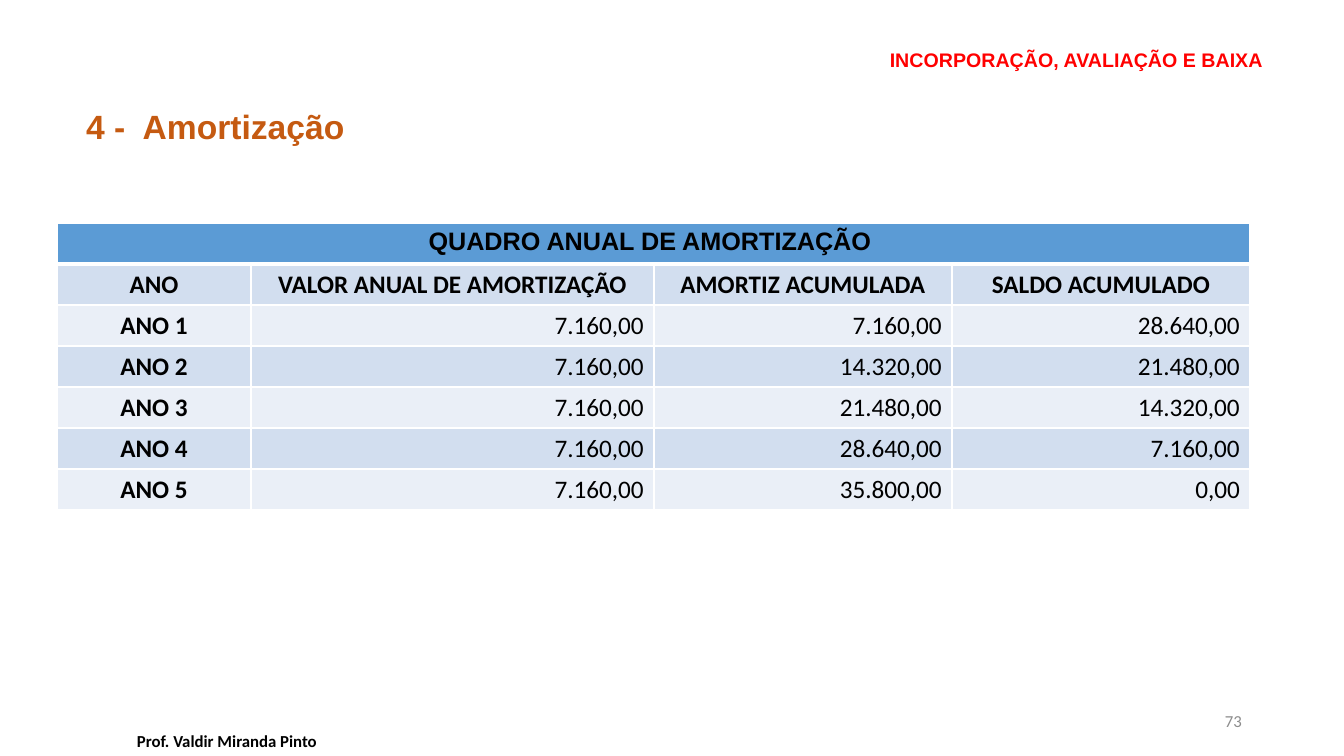
from dataclasses import dataclass

import pptx
import pptx.dml.color
import pptx.enum.text
import pptx.oxml
import pptx.oxml.ns
import pptx.util
from lxml import etree

PX = 914400 / 100.8
ALIGN = pptx.enum.text.PP_ALIGN
ANCHOR = pptx.enum.text.MSO_ANCHOR


@dataclass
class Style:
    size: int
    font: str
    color: str
    bold: bool
    align: ALIGN


@dataclass
class Label:
    text: str
    box: tuple[int, int, int, int]
    style: Style
    anchor: ANCHOR = ANCHOR.MIDDLE
    spacing: float = 1.0


TITLE = Label("INCORPORAÇÃO, AVALIAÇÃO E BAIXA", (98, 42, 1175, 38),
              Style(14, "Arial", "FF0000", True, ALIGN.RIGHT), spacing=0.9)
TOPIC = Label("4 -  Amortização", (76, 105, 1175, 49),
              Style(24, "Arial", "C55A11", True, ALIGN.LEFT), ANCHOR.TOP, 0.9)
FOOTERS = [
    Label("Prof. Valdir Miranda Pinto", (0, 728, 454, 26),
          Style(12, "Calibri", "000000", True, ALIGN.CENTER)),
    Label("73", (950, 701, 302, 40),
          Style(12, "Calibri", "8C8C8C", False, ALIGN.RIGHT)),
]

CAPTION = Style(18, "Arial", "000000", True, ALIGN.CENTER)
HEADING = Style(18, "Calibri", "000000", True, ALIGN.CENTER)
AMOUNT = Style(18, "Calibri", "000000", False, ALIGN.RIGHT)
CAPTION_FILL = "5B9BD5"
BANDS = ("EAEFF7", "D2DEEF")
TABLE_LEFT, TABLE_TOP, ROW_HEIGHT = 57, 223, 41
COL_WIDTHS = (194, 403, 298, 298)
ROWS = [
    ("QUADRO ANUAL DE AMORTIZAÇÃO ", "", "", ""),
    ("ANO", "VALOR ANUAL DE AMORTIZAÇÃO", "AMORTIZ ACUMULADA", "SALDO ACUMULADO"),
    ("ANO 1", "7.160,00", "7.160,00", "28.640,00"),
    ("ANO 2", "7.160,00", "14.320,00", "21.480,00"),
    ("ANO 3", "7.160,00", "21.480,00", "14.320,00"),
    ("ANO 4", "7.160,00", "28.640,00", "7.160,00"),
    ("ANO 5", "7.160,00", "35.800,00", "0,00"),
]


def px(n: int) -> int:
    return pptx.util.Emu(round(n * PX))


def rgb(value: str) -> pptx.dml.color.RGBColor:
    return pptx.dml.color.RGBColor.from_string(value)


def write(p, text: str, style: Style) -> None:
    p.alignment = style.align
    r = p.add_run()
    r.text = text
    r.font.size = pptx.util.Pt(style.size)
    r.font.name = style.font
    r.font.bold = style.bold
    r.font.color.rgb = rgb(style.color)


def fill_label(sp, label: Label) -> None:
    sp.left, sp.top, sp.width, sp.height = map(px, label.box)
    tf = sp.text_frame
    tf.word_wrap = True
    tf.auto_size = pptx.enum.text.MSO_AUTO_SIZE.NONE
    tf.vertical_anchor = label.anchor
    p = tf.paragraphs[0]
    p.line_spacing = label.spacing
    p.space_before = pptx.util.Pt(0)
    write(p, label.text, label.style)


def remove_bullet(p) -> None:
    pPr = p._p.get_or_add_pPr()
    pPr.set("marL", "0")
    pPr.set("indent", "0")
    etree.SubElement(pPr, pptx.oxml.ns.qn("a:buNone"))


def add_border(cell, side: str, points: int) -> None:
    tcPr = cell._tc.get_or_add_tcPr()
    tcPr.append(pptx.oxml.parse_xml(
        f'<a:ln{side} {pptx.oxml.ns.nsdecls("a")} w="{pptx.util.Pt(points)}">'
        f'<a:solidFill><a:srgbClr val="FFFFFF"/></a:solidFill></a:ln{side}>'))


def add_schedule(s) -> None:
    frame = s.shapes.add_table(len(ROWS), len(COL_WIDTHS), px(TABLE_LEFT), px(TABLE_TOP),
                               px(sum(COL_WIDTHS)), px(ROW_HEIGHT * len(ROWS)))
    table = frame.table
    for column, width in zip(table.columns, COL_WIDTHS):
        column.width = px(width)
    for i, texts in enumerate(ROWS):
        table.rows[i].height = px(ROW_HEIGHT)
        for j, text in enumerate(texts):
            cell = table.cell(i, j)
            # The rule between caption and headings is thicker
            for side in "LRTB":
                thick = (i, side) in ((0, "B"), (1, "T"))
                add_border(cell, side, 3 if thick else 1)
            cell.fill.solid()
            cell.fill.fore_color.rgb = rgb(BANDS[i % 2] if i else CAPTION_FILL)
            if text:
                style = CAPTION if i == 0 else HEADING if i == 1 or j == 0 else AMOUNT
                write(cell.text_frame.paragraphs[0], text, style)
    table.cell(0, 0).merge(table.cell(0, len(COL_WIDTHS) - 1))


def main() -> None:
    prs = pptx.Presentation()
    prs.slide_width, prs.slide_height = px(1344), px(756)
    s = prs.slides.add_slide(prs.slide_layouts[1])

    # Title and topic
    fill_label(s.shapes.title, TITLE)
    body = s.placeholders[1]
    remove_bullet(body.text_frame.paragraphs[0])
    fill_label(body, TOPIC)

    # Author and page number
    for label in FOOTERS:
        fill_label(s.shapes.add_textbox(*map(px, label.box)), label)

    # Amortization schedule
    add_schedule(s)
    prs.save("out.pptx")


if __name__ == "__main__":
    main()
